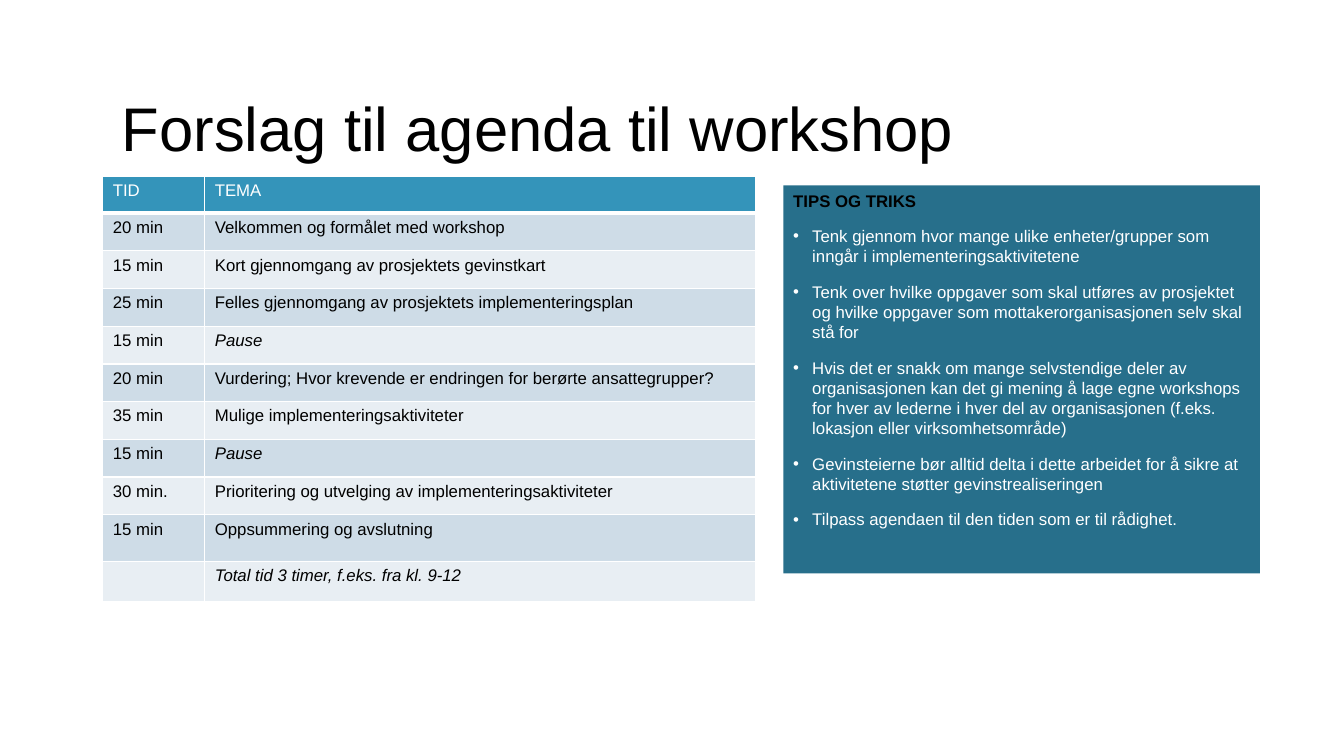
from lxml import etree
from pptx import Presentation
from pptx.dml.color import RGBColor
from pptx.enum.shapes import MSO_SHAPE
from pptx.enum.text import MSO_ANCHOR, PP_ALIGN
from pptx.oxml.ns import qn
from pptx.util import Cm, Pt

WHITE, BLACK = "FFFFFF", "000000"
HEADER_FILL, TIPS_FILL = "3494BA", "276F8B"
BAND_FILLS = ("CEDCE7", "E8EEF3")
HEADER_HEIGHT, ROW_HEIGHT, CLOSING_HEIGHT = 0.92, 0.95, 1.18

AGENDA = [
    ("TID", "TEMA"),
    ("20 min", "Velkommen og formålet med workshop"),
    ("15 min", "Kort gjennomgang av prosjektets gevinstkart"),
    ("25 min", "Felles gjennomgang av prosjektets implementeringsplan"),
    ("15 min", "Pause"),
    ("20 min", "Vurdering; Hvor krevende er endringen for berørte ansattegrupper?"),
    ("35 min", "Mulige implementeringsaktiviteter"),
    ("15 min", "Pause"),
    ("30 min.", "Prioritering og utvelging av implementeringsaktiviteter"),
    ("15 min", "Oppsummering og avslutning"),
    ("", "Total tid 3 timer, f.eks. fra kl. 9-12"),
]
ITALIC_TOPICS = ("Pause", AGENDA[-1][1])
CLOSING_TOPIC = "Oppsummering og avslutning"

TIPS = [
    "Tenk gjennom hvor mange ulike enheter/grupper som inngår i implementeringsaktivitetene",
    "Tenk over hvilke oppgaver som skal utføres av prosjektet og hvilke oppgaver som "
    "mottakerorganisasjonen selv skal stå for",
    "Hvis det er snakk om mange selvstendige deler av organisasjonen kan det gi mening å lage "
    "egne workshops for hver av lederne i hver del av organisasjonen (f.eks. lokasjon eller "
    "virksomhetsområde)",
    "Gevinsteierne bør alltid delta i dette arbeidet for å sikre at aktivitetene støtter "
    "gevinstrealiseringen",
    "Tilpass agendaen til den tiden som er til rådighet.",
]


def color(value):
    return RGBColor.from_string(value)


def set_fill(target, value):
    target.fill.solid()
    target.fill.fore_color.rgb = color(value)


def write_text(paragraph, text, size=12, font_color=BLACK, bold=False, italic=False):
    paragraph.alignment = PP_ALIGN.LEFT
    run = paragraph.add_run()
    run.text = text
    run.font.name = "Arial"
    run.font.size = Pt(size)
    run.font.bold = bold
    run.font.italic = italic
    run.font.color.rgb = color(font_color)


def add_bullet(paragraph):
    properties = paragraph._p.get_or_add_pPr()
    properties.set("marL", str(Cm(0.48)))
    properties.set("indent", str(-Cm(0.48)))
    font = etree.SubElement(properties, qn("a:buFont"))
    font.set("typeface", "Arial")
    etree.SubElement(properties, qn("a:buChar")).set("char", "•")


def set_borders(cell, bottom_width):
    properties = cell._tc.get_or_add_tcPr()
    for side, width in (("L", 1), ("R", 1), ("T", 1), ("B", bottom_width)):
        line = etree.SubElement(properties, qn(f"a:ln{side}"))
        line.set("w", str(Pt(width)))
        fill = etree.SubElement(line, qn("a:solidFill"))
        etree.SubElement(fill, qn("a:srgbClr")).set("val", WHITE)


def add_title(slide, text):
    shape = slide.shapes.add_textbox(Cm(2.82), Cm(2.36), Cm(29.34), Cm(1.93))
    frame = shape.text_frame
    frame.word_wrap = True
    frame.vertical_anchor = MSO_ANCHOR.MIDDLE
    frame.paragraphs[0].line_spacing = 0.9
    write_text(frame.paragraphs[0], text, size=44)


def add_agenda(slide):
    height = Cm(HEADER_HEIGHT + ROW_HEIGHT * 9 + CLOSING_HEIGHT)
    table = slide.shapes.add_table(
        len(AGENDA), 2, Cm(2.59), Cm(4.45), Cm(16.44), height
    ).table
    table.columns[0].width = Cm(2.57)
    table.columns[1].width = Cm(13.87)
    for index, entry in enumerate(AGENDA):
        header = index == 0
        row_height = CLOSING_HEIGHT if entry[1] == CLOSING_TOPIC else ROW_HEIGHT
        table.rows[index].height = Cm(HEADER_HEIGHT if header else row_height)
        for cell, text in zip(table.rows[index].cells, entry):
            set_borders(cell, bottom_width=3 if header else 1)
            set_fill(cell, HEADER_FILL if header else BAND_FILLS[(index - 1) % 2])
            write_text(
                cell.text_frame.paragraphs[0],
                text,
                font_color=WHITE if header else BLACK,
                italic=text in ITALIC_TOPICS,
            )


def add_tips(slide):
    shape = slide.shapes.add_shape(
        MSO_SHAPE.RECTANGLE, Cm(19.74), Cm(4.67), Cm(12.01), Cm(9.78)
    )
    shape.shadow.inherit = False
    shape.line.fill.background()
    set_fill(shape, TIPS_FILL)
    frame = shape.text_frame
    frame.word_wrap = True
    frame.vertical_anchor = MSO_ANCHOR.TOP
    write_text(frame.paragraphs[0], "TIPS OG TRIKS", bold=True)
    for tip in TIPS:
        paragraph = frame.add_paragraph()
        paragraph.space_before = Pt(11)
        add_bullet(paragraph)
        write_text(paragraph, tip, font_color=WHITE)


def main():
    presentation = Presentation()
    presentation.slide_width = Cm(33.87)
    presentation.slide_height = Cm(19.05)
    slide = presentation.slides.add_slide(presentation.slide_layouts[6])
    add_title(slide, "Forslag til agenda til workshop")
    add_agenda(slide)
    add_tips(slide)
    presentation.save("out.pptx")


if __name__ == "__main__":
    main()
